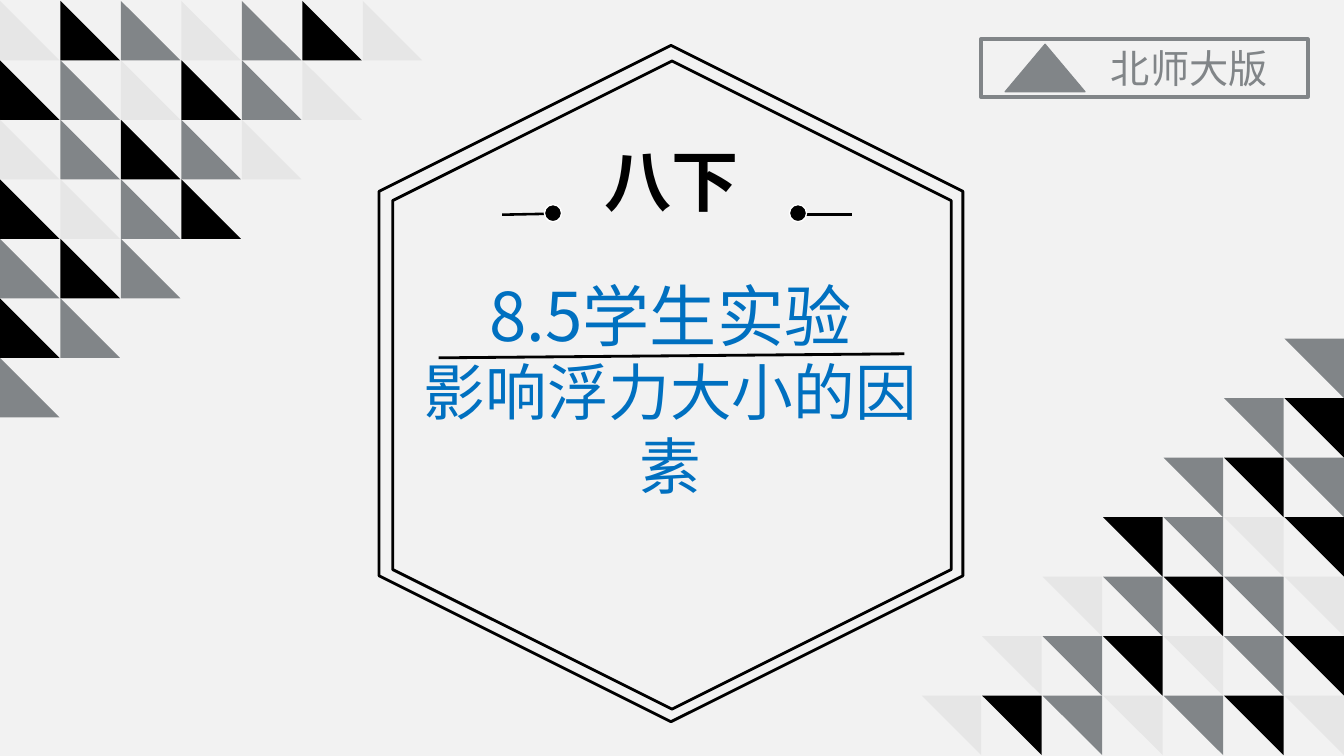
from lxml import etree
from pptx import Presentation
from pptx import util as u
from pptx.dml.color import RGBColor
from pptx.enum import shapes, text
from pptx.oxml.ns import qn

BLACK = RGBColor(0x00, 0x00, 0x00)
WHITE = RGBColor(0xFF, 0xFF, 0xFF)
GREY = RGBColor(0x81, 0x85, 0x88)
LIGHT = RGBColor(0xE6, 0xE6, 0xE6)
PAPER = RGBColor(0xF2, 0xF2, 0xF2)
BLUE = RGBColor(0x00, 0x70, 0xC0)
SANS, NARROW = "Noto Sans CJK SC", "Arial Narrow"
WIDTH, HEIGHT = 13.33, 7.5

# One letter per triangle, counted from the corner of the slide
MOSAIC = ["LBGLGBL", "BGLBGL", "LGBGL", "BLGB", "GBG", "BG", "G"]
TONES = {"B": BLACK, "G": GREY, "L": LIGHT}
TRIANGLE, COLUMN_STEP, ROW_STEP = 0.59, 0.6, 0.59

HEXAGONS = [(3.3, 0.91, 6.71, 5.79), (3.45, 1.05, 6.43, 5.54)]
# text, box, size, font, colour, bold, alignment
TEXTS = [
    ("8.5学生实验", (3.95, 2.67, 5.4, 0.91), 48, SANS, BLUE, False, text.PP_ALIGN.CENTER),
    ("影响浮力大小的因素", (3.82, 3.46, 5.66, 0.84), 44, SANS, BLUE, False, text.PP_ALIGN.CENTER),
    ("八下", (5.12, 1.33, 3.08, 0.91), 48, NARROW, BLACK, True, text.PP_ALIGN.CENTER),
    ("北师大版", (10.92, 0.39, 1.83, 0.57), 28, SANS, GREY, False, text.PP_ALIGN.LEFT),
]
# start, end, width
LINES = [
    ((4.35, 3.55), (8.97, 3.51), 2),
    ((7.89, 2.13), (8.45, 2.13), 1.85),
    ((5.49, 2.12), (4.98, 2.13), 1.85),
]
DOTS = [(7.83, 2.03, 0.17, 0.17), (5.4, 2.03, 0.17, 0.17)]
BADGE_TRIANGLE = (9.97, 0.44, 0.79, 0.47)
BADGE_FRAME = (9.73, 0.39, 3.24, 0.57)


def add_figure(slide, kind, box, fill=None, line=None, line_width=1, rotation=0):
    shape = slide.shapes.add_shape(kind, *map(u.Inches, box))
    shape.shadow.inherit = False
    shape.rotation = rotation
    if fill is None:
        shape.fill.background()
    else:
        shape.fill.solid()
        shape.fill.fore_color.rgb = fill
    if line is None:
        shape.line.fill.background()
    else:
        shape.line.color.rgb = line
        shape.line.width = u.Pt(line_width)


def add_mosaic(slide):
    """Fill the top left corner, and the opposite one turned by half a circle."""
    for row, letters in enumerate(MOSAIC):
        for column, letter in enumerate(letters):
            left, top = column * COLUMN_STEP, 0.01 + row * ROW_STEP
            opposite = WIDTH - TRIANGLE - left, HEIGHT - TRIANGLE - top
            for corner, rotation in (((left, top), 0), (opposite, 180)):
                add_figure(slide, shapes.MSO_SHAPE.RIGHT_TRIANGLE,
                           (*corner, TRIANGLE, TRIANGLE), TONES[letter], rotation=rotation)


def add_text(slide, words, box, size, font, colour, bold, alignment):
    frame = slide.shapes.add_textbox(*map(u.Inches, box)).text_frame
    frame.word_wrap = True
    frame.auto_size = text.MSO_AUTO_SIZE.SHAPE_TO_FIT_TEXT
    paragraph = frame.paragraphs[0]
    paragraph.text = words
    paragraph.alignment = alignment
    paragraph.font.size = u.Pt(size)
    paragraph.font.name = font
    paragraph.font.bold = bold
    paragraph.font.color.rgb = colour


def add_line(slide, start, end, width):
    connector = slide.shapes.add_connector(
        shapes.MSO_CONNECTOR.STRAIGHT, *map(u.Inches, start + end))
    connector.line.color.rgb = BLACK
    connector.line.width = u.Pt(width)
    etree.SubElement(connector._element.spPr, qn("a:effectLst"))


def main():
    presentation = Presentation()
    presentation.slide_width = u.Inches(WIDTH)
    presentation.slide_height = u.Inches(HEIGHT)
    slide = presentation.slides.add_slide(presentation.slide_layouts[6])
    slide.background.fill.solid()
    slide.background.fill.fore_color.rgb = PAPER

    add_mosaic(slide)
    for box in HEXAGONS:
        add_figure(slide, shapes.MSO_SHAPE.HEXAGON, box, line=BLACK, line_width=2, rotation=270)
    for entry in TEXTS:
        add_text(slide, *entry)
    for entry in LINES:
        add_line(slide, *entry)
    for box in DOTS:
        add_figure(slide, shapes.MSO_SHAPE.OVAL, box, BLACK, WHITE)
    add_figure(slide, shapes.MSO_SHAPE.ISOSCELES_TRIANGLE, BADGE_TRIANGLE, GREY, GREY)
    add_figure(slide, shapes.MSO_SHAPE.RECTANGLE, BADGE_FRAME, line=GREY, line_width=3)
    presentation.save("out.pptx")


if __name__ == "__main__":
    main()
